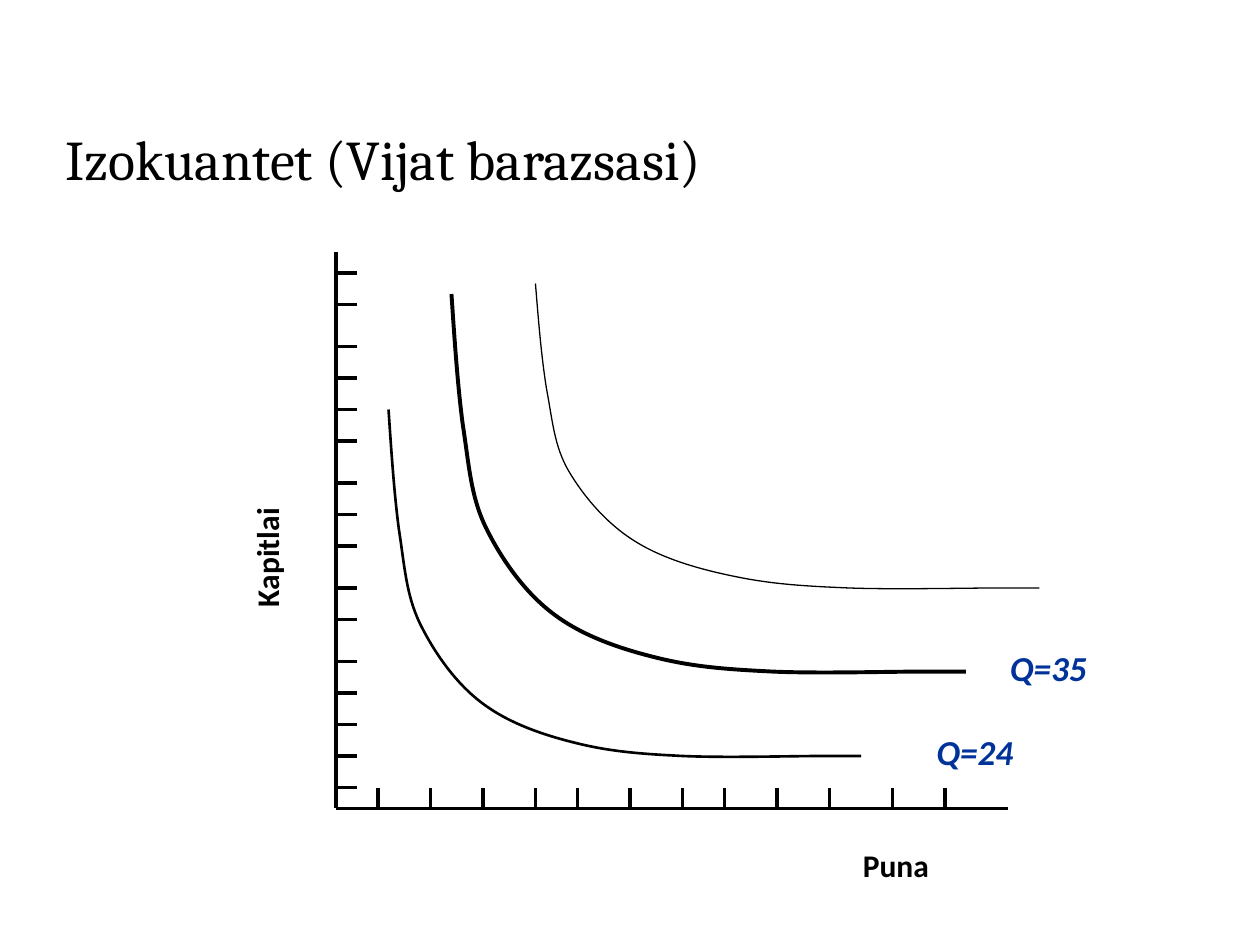
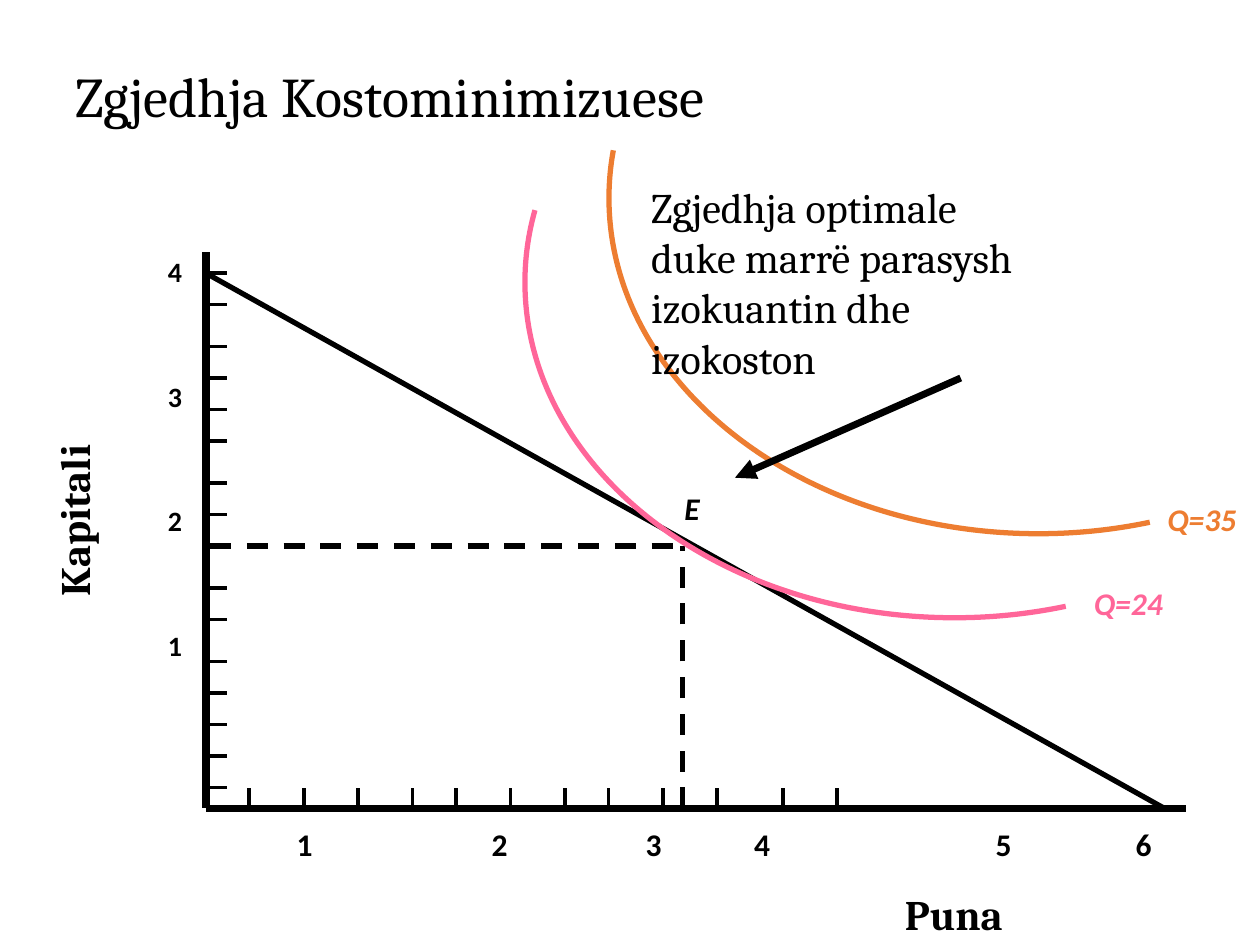
import math

from lxml import etree
from pptx import Presentation
from pptx.dml.color import RGBColor
from pptx.enum.dml import MSO_LINE
from pptx.enum.shapes import MSO_CONNECTOR
from pptx.enum.text import MSO_ANCHOR, PP_ALIGN
from pptx.oxml.ns import qn
from pptx.util import Pt

STRAIGHT = MSO_CONNECTOR.STRAIGHT
DASH = MSO_LINE.DASH
TOP, MIDDLE = MSO_ANCHOR.TOP, MSO_ANCHOR.MIDDLE
LEFT, RIGHT = PP_ALIGN.LEFT, PP_ALIGN.RIGHT

BLACK = RGBColor(0x00, 0x00, 0x00)
BLUE = RGBColor(0x00, 0x33, 0x99)
PINK = RGBColor(0xFF, 0x66, 0x99)
ORANGE = RGBColor(0xED, 0x7D, 0x31)

HEADING_FONT = "Cambria"
LABEL_FONT = "Calibri"

AXIS_TOP, AXIS_JOINT, AXIS_BOTTOM = 144, 432, 462
TICK_LENGTH, TICK_WIDTH, TICK_UNIT = 12, 2.25, 6
CAPITAL_TICKS = [26, 29, 33, 36, 39, 42, 46, 49, 52, 56, 59, 63, 66, 69, 72, 75]
LABOUR_TICKS = [4, 9, 14, 19, 23, 28, 33, 37, 42, 47, 53, 58]

ISOQUANT_PERCENT = [
    (0, 0), (0.6, 12.2), (1.2, 24.3), (2.2, 34.6), (3.4, 45), (3.7, 53.3),
    (6.6, 61.6), (9.6, 70), (14.1, 78.8), (19.6, 84.5), (25.1, 90.3),
    (32.2, 93.7), (39.2, 96.1), (46.1, 98.5), (52.2, 99.3), (60.9, 99.9),
    (69.6, 100.6), (85, 100), (91.5, 100), (97.9, 100), (98.7, 100), (100, 100),
]
ARC_RADIUS_X, ARC_RADIUS_Y = 245.5, 191.75


class Deck:
    def __init__(self):
        self.presentation = Presentation()
        self.presentation.slide_width = Pt(720)
        self.presentation.slide_height = Pt(540)
        self.slide = None

    def new_slide(self, title, left, top, height):
        self.slide = self.presentation.slides.add_slide(self.presentation.slide_layouts[6])
        self.text(title, left, top, 636, height, 32, HEADING_FONT,
                  bold=False, anchor=MIDDLE, line_spacing=0.9)

    def text(self, content, left, top, width, height, size, font=LABEL_FONT, color=BLACK,
             bold=True, italic=False, anchor=TOP, align=LEFT, rotation=0,
             line_spacing=1.0, space_after=0):
        shape = self.slide.shapes.add_textbox(Pt(left), Pt(top), Pt(width), Pt(height))
        shape.rotation = rotation
        text_frame = shape.text_frame
        text_frame.word_wrap = True
        text_frame.vertical_anchor = anchor
        text_frame.text = content
        for paragraph in text_frame.paragraphs:
            paragraph.alignment = align
            paragraph.line_spacing = line_spacing
            paragraph.space_after = Pt(space_after)
            for run in paragraph.runs:
                run.font.name = font
                run.font.size = Pt(size)
                run.font.bold = bold
                run.font.italic = italic
                run.font.color.rgb = color
        return shape

    def tabbed_text(self, labels, stops, left, top, width, height, size):
        shape = self.text("".join(f"\t{label}" for label in labels),
                          left, top, width, height, size)
        properties = shape.text_frame.paragraphs[0]._p.get_or_add_pPr()
        tab_list = etree.SubElement(properties, qn("a:tabLst"))
        for stop in stops:
            etree.SubElement(tab_list, qn("a:tab"), pos=str(Pt(stop)), algn="ctr")

    def line(self, start, end, width, dash=None, arrow=False):
        connector = self.slide.shapes.add_connector(
            STRAIGHT, *(Pt(value) for value in (*start, *end)))
        connector.line.color.rgb = BLACK
        connector.line.width = Pt(width)
        if dash:
            connector.line.dash_style = dash
        if arrow:
            etree.SubElement(connector.line._get_or_add_ln(), qn("a:tailEnd"), type="triangle")
        etree.SubElement(connector._element.spPr, qn("a:effectLst"))

    def curve(self, controls, width, color=BLACK):
        corners = [(Pt(x), Pt(y)) for x, y in controls]
        builder = self.slide.shapes.build_freeform(*corners[0])
        builder.add_line_segments(corners[1:], close=False)
        shape = builder.convert_to_shape()
        segments = list(shape._element.iter(qn("a:lnTo")))
        outline = segments[0].getparent()
        for first in range(0, len(segments), 3):
            bezier = etree.SubElement(outline, qn("a:cubicBezTo"))
            for segment in segments[first:first + 3]:
                bezier.append(segment[0])
                outline.remove(segment)
        shape.shadow.inherit = False
        shape.fill.background()
        shape.line.color.rgb = color
        shape.line.width = Pt(width)

    def isoquant(self, left, top, width, height, line_width):
        controls = [(left + width * x / 100, top + height * y / 100)
                    for x, y in ISOQUANT_PERCENT]
        self.curve(controls, line_width)

    def arc(self, center_x, center_y, start_angle, end_angle, color):
        angles = [math.radians(angle) for angle in (start_angle, 180, 90, end_angle)]
        unit_points = [(math.cos(angles[0]), math.sin(angles[0]))]
        for start, end in zip(angles, angles[1:]):
            reach = 4 / 3 * math.tan((end - start) / 4)
            unit_points += [
                (math.cos(start) - reach * math.sin(start),
                 math.sin(start) + reach * math.cos(start)),
                (math.cos(end) + reach * math.sin(end),
                 math.sin(end) - reach * math.cos(end)),
                (math.cos(end), math.sin(end)),
            ]
        self.curve([(center_x + ARC_RADIUS_X * x, center_y + ARC_RADIUS_Y * y)
                    for x, y in unit_points], 3, color)

    def axes(self, origin, right, width, labour_scale=1.0):
        self.line((origin, AXIS_TOP), (origin, AXIS_JOINT), width)
        self.line((origin, AXIS_BOTTOM), (right, AXIS_BOTTOM), width)
        self.line((origin, AXIS_JOINT), (origin, AXIS_BOTTOM), width)
        for tick in CAPITAL_TICKS:
            y = tick * TICK_UNIT
            self.line((origin, y), (origin + TICK_LENGTH, y), TICK_WIDTH)
        for tick in LABOUR_TICKS:
            x = origin + tick * TICK_UNIT * labour_scale
            self.line((x, AXIS_BOTTOM), (x, AXIS_BOTTOM - TICK_LENGTH), TICK_WIDTH)


def add_isoquants_slide(deck):
    deck.new_slide("Izokuantet (Vijat barazsasi)", 30.25, 48, 90)
    deck.axes(192, 576, 2.25)
    deck.text("Puna", 486, 480, 78, 29, 18)
    deck.text("Kapitlai", 86.5, 273.5, 132, 29, 18, rotation=270)
    deck.isoquant(222, 234, 270, 198, 1.5)
    deck.isoquant(258, 168, 294, 215.75, 2.25)
    deck.text("Q=35", 570, 366, 90, 31, 20, color=BLUE, italic=True)
    deck.text("Q=24", 528, 414, 90, 31, 20, color=BLUE, italic=True)
    deck.isoquant(306, 162, 288, 174, 0.75)


def add_cost_minimizing_slide(deck):
    origin = 117.5
    optimum_x, optimum_y = 390, 312
    deck.new_slide("Zgjedhja Kostominimizuese", 36, 30, 54)
    deck.axes(origin, 677.5, 4.5, labour_scale=1.037)
    deck.text("Puna", 510, 504, 114, 36, 24, HEADING_FONT)
    deck.text("Kapitali", -24, 263.75, 132, 36, 24, HEADING_FONT, rotation=270)
    deck.text("4\n3\n2\n1", 49, 144, 62, 328, 16, align=RIGHT,
              line_spacing=0.9, space_after=54)
    deck.tabbed_text("123456", [37.5, 149, 237, 299, 437, 517], 129.5, 468, 560, 29, 18)
    deck.line((origin, 156), (665.5, AXIS_BOTTOM), 3)
    deck.line((120, optimum_y), (optimum_x, optimum_y), 3, dash=DASH)
    deck.line((optimum_x, AXIS_BOTTOM), (optimum_x, optimum_y), 3, dash=DASH)
    deck.arc(545.5, 161.25, 192.4, 75, PINK)
    deck.arc(593.5, 113.25, 188.2, 75, ORANGE)
    deck.text("Q=24", 618, 330, 84, 50, 18, color=PINK, italic=True)
    deck.text("Q=35", 660, 282, 60, 50, 18, color=ORANGE, italic=True)
    deck.text("E", 384, 276, 50, 29, 18, italic=True)
    deck.line((549, 216), (420, 273), 4, arrow=True)
    deck.text("Zgjedhja optimale\nduke marrë parasysh\nizokuantin dhe\vizokoston",
              365, 100, 263.5, 94, 24, HEADING_FONT, bold=False)


def main():
    deck = Deck()
    add_isoquants_slide(deck)
    add_cost_minimizing_slide(deck)
    deck.presentation.save("out.pptx")


if __name__ == "__main__":
    main()
